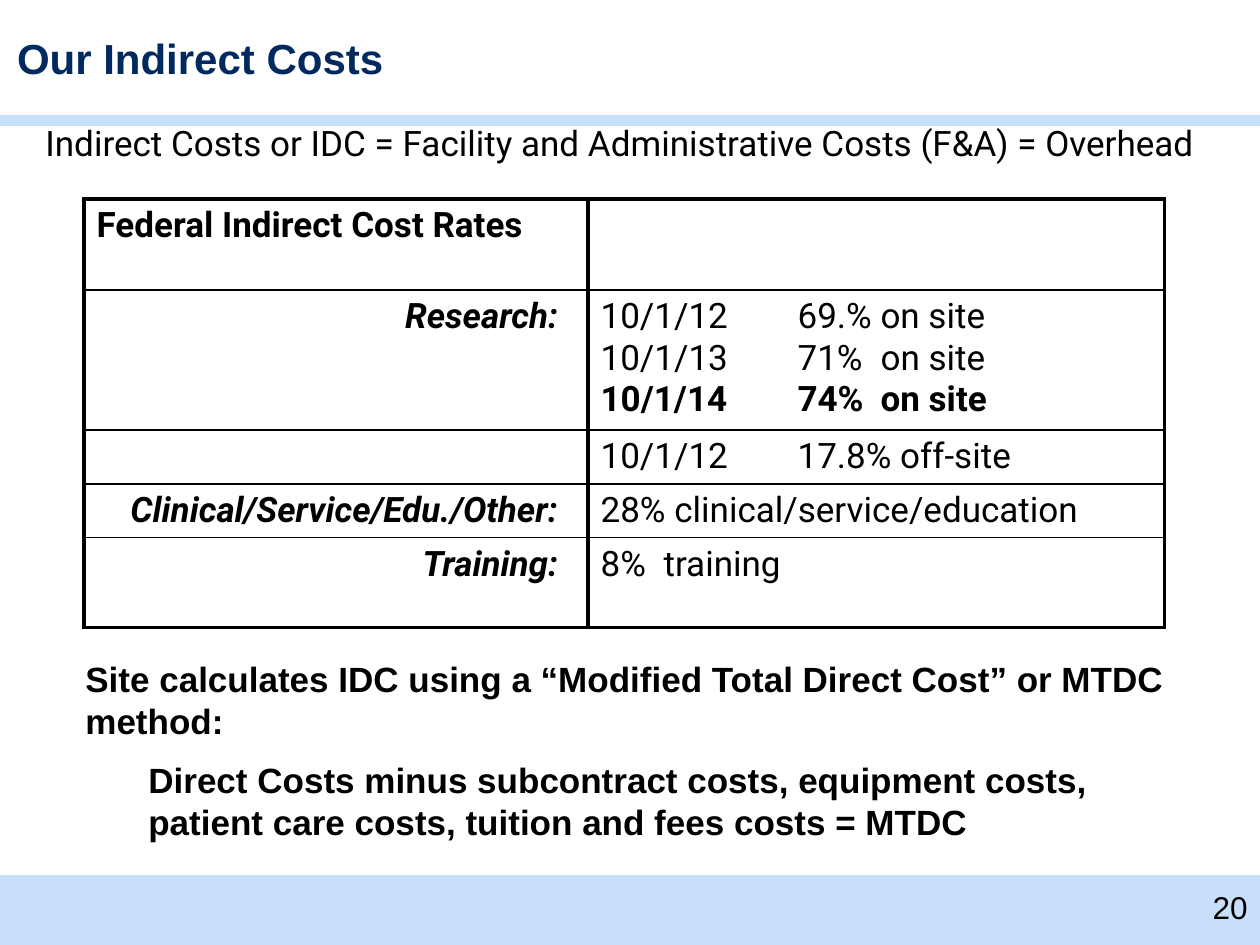
import pptx
import pptx.util
import pptx.dml.color
import pptx.enum.shapes
import pptx.enum.text
import pptx.oxml
import pptx.oxml.ns
from lxml import etree

# Content
TITLE = "Our Indirect Costs"
DEFINITION = "Indirect Costs or IDC = Facility and Administrative Costs (F&A) = Overhead"
# Each row: height, label, label is italic, list of (text, bold)
RATES = [
    (91, "Federal Indirect Cost Rates", False, []),
    (140, "Research:", True, [("10/1/12\t69.% on site", False),
                              ("10/1/13\t71%\ton site", False),
                              ("10/1/14\t74%\ton site", True)]),
    (53, "", True, [("10/1/12\t17.8% off-site", False)]),
    (53, "Clinical/Service/Edu./Other:", True, [("28% clinical/service/education", False)]),
    (90, "Training:", True, [("8%\ttraining", False)]),
]
METHOD = [  # text, indent, space before
    ("Site calculates IDC using a “Modified Total Direct Cost” or MTDC method:", 0, 0),
    ("Direct Costs minus subcontract costs, equipment costs, patient care costs, "
     "tuition and fees costs = MTDC", 63, 10),
]
PAGE = "20"

COLORS = {"navy": "002960", "black": "000000", "footer": "C7DFFB", "rule": "C7E0FB"}
COLUMNS = (504, 577)
TABS = (63, 197, 280)
ALIGN = pptx.enum.text.PP_ALIGN
qn = pptx.oxml.ns.qn


def px(n):
    return pptx.util.Emu(round(n * 914400 / 126))


def box(*lengths):
    return [px(n) for n in lengths]


def color(name):
    return pptx.dml.color.RGBColor.from_string(COLORS[name])


def write(p, text, size, font="Arial", bold=False, italic=False, ink="black"):
    r = p.add_run()
    r.text = text
    r.font.size = pptx.util.Pt(size)
    r.font.name = font
    r.font.bold = bold
    r.font.italic = italic
    r.font.color.rgb = color(ink)


def place(sp, *lengths):
    sp.left, sp.top, sp.width, sp.height = box(*lengths)


def no_insets(tf):
    tf.margin_left = tf.margin_top = tf.margin_right = tf.margin_bottom = 0
    tf.word_wrap = True
    tf.auto_size = pptx.enum.text.MSO_AUTO_SIZE.NONE


def set_borders(cell, widths):
    tc_pr = cell._tc.get_or_add_tcPr()
    for i, (side, width) in enumerate(zip(("lnL", "lnR", "lnT", "lnB"), widths)):
        ln = etree.Element(qn("a:" + side), w=str(pptx.util.Pt(width)))
        fill = etree.SubElement(ln, qn("a:solidFill"))
        etree.SubElement(fill, qn("a:srgbClr"), val=COLORS["black"])
        tc_pr.insert(i, ln)


def set_tabs(p):
    tabs = etree.SubElement(p._p.get_or_add_pPr(), qn("a:tabLst"))
    for stop in TABS:
        etree.SubElement(tabs, qn("a:tab"), pos=str(px(stop)), algn="l")


def main():
    prs = pptx.Presentation()
    prs.slide_width, prs.slide_height = box(1260, 945)
    s = prs.slides.add_slide(prs.slide_layouts[1])

    # Bands
    for name, lengths in (("footer", (0, 875, 1260, 70)), ("rule", (0, 115, 1260, 11))):
        sp = s.shapes.add_shape(pptx.enum.shapes.MSO_SHAPE.RECTANGLE, *box(*lengths))
        sp.shadow.inherit = False
        sp.fill.solid()
        sp.fill.fore_color.rgb = color(name)
        sp.line.fill.background()

    # Title
    title = s.shapes.title
    place(title, 17, 32, 1077, 51)
    no_insets(title.text_frame)
    title.text_frame.vertical_anchor = pptx.enum.text.MSO_ANCHOR.MIDDLE
    p = title.text_frame.paragraphs[0]
    p.alignment = ALIGN.LEFT
    write(p, TITLE, 24, bold=True, ink="navy")

    # Definition
    body = s.placeholders[1]
    place(body, 32, 126, 1176, 60)
    no_insets(body.text_frame)
    p = body.text_frame.paragraphs[0]
    p.alignment = ALIGN.CENTER
    p.line_spacing = 0.9
    p.space_before = pptx.util.Pt(0)
    p_pr = p._p.get_or_add_pPr()
    p_pr.set("marL", "0")
    p_pr.set("indent", "0")
    etree.SubElement(p_pr, qn("a:buNone"))
    write(p, DEFINITION, 20, "Roboto")

    # Rates table
    height = sum(row[0] for row in RATES)
    table = s.shapes.add_table(len(RATES), len(COLUMNS),
                               *box(84, 199, sum(COLUMNS), height)).table
    table.first_row = table.horz_banding = False
    for column, width in zip(table.columns, COLUMNS):
        column.width = px(width)
    last = len(RATES) - 1
    for i, (row_height, label, italic, values) in enumerate(RATES):
        table.rows[i].height = px(row_height)
        for cell in table.rows[i].cells:
            cell.fill.background()
            set_borders(cell, (2, 2, 2 if i == 0 else 1, 2 if i == last else 1))
        name, rates = table.rows[i].cells
        p = name.text_frame.paragraphs[0]
        if italic:
            p.alignment = ALIGN.RIGHT
            name.margin_right = px(30)
        if label:
            write(p, label, 20, "Roboto", bold=True, italic=italic)
        for n, (text, bold) in enumerate(values):
            tf = rates.text_frame
            p = tf.add_paragraph() if n else tf.paragraphs[0]
            set_tabs(p)
            write(p, text, 20, "Roboto", bold=bold)

    # Method
    tf = s.shapes.add_textbox(*box(73, 651, 1144, 202)).text_frame
    tf.word_wrap = True
    for n, (text, indent, before) in enumerate(METHOD):
        p = tf.add_paragraph() if n else tf.paragraphs[0]
        p.space_before = pptx.util.Pt(before)
        p._p.get_or_add_pPr().set("marL", str(px(indent)))
        write(p, text, 20, bold=True)

    # Page number
    tf = s.shapes.add_textbox(*box(0, 882, 1260, 50)).text_frame
    tf.word_wrap = True
    tf.paragraphs[0].alignment = ALIGN.RIGHT
    write(tf.paragraphs[0], PAGE, 18)

    prs.save("out.pptx")


if __name__ == "__main__":
    main()
